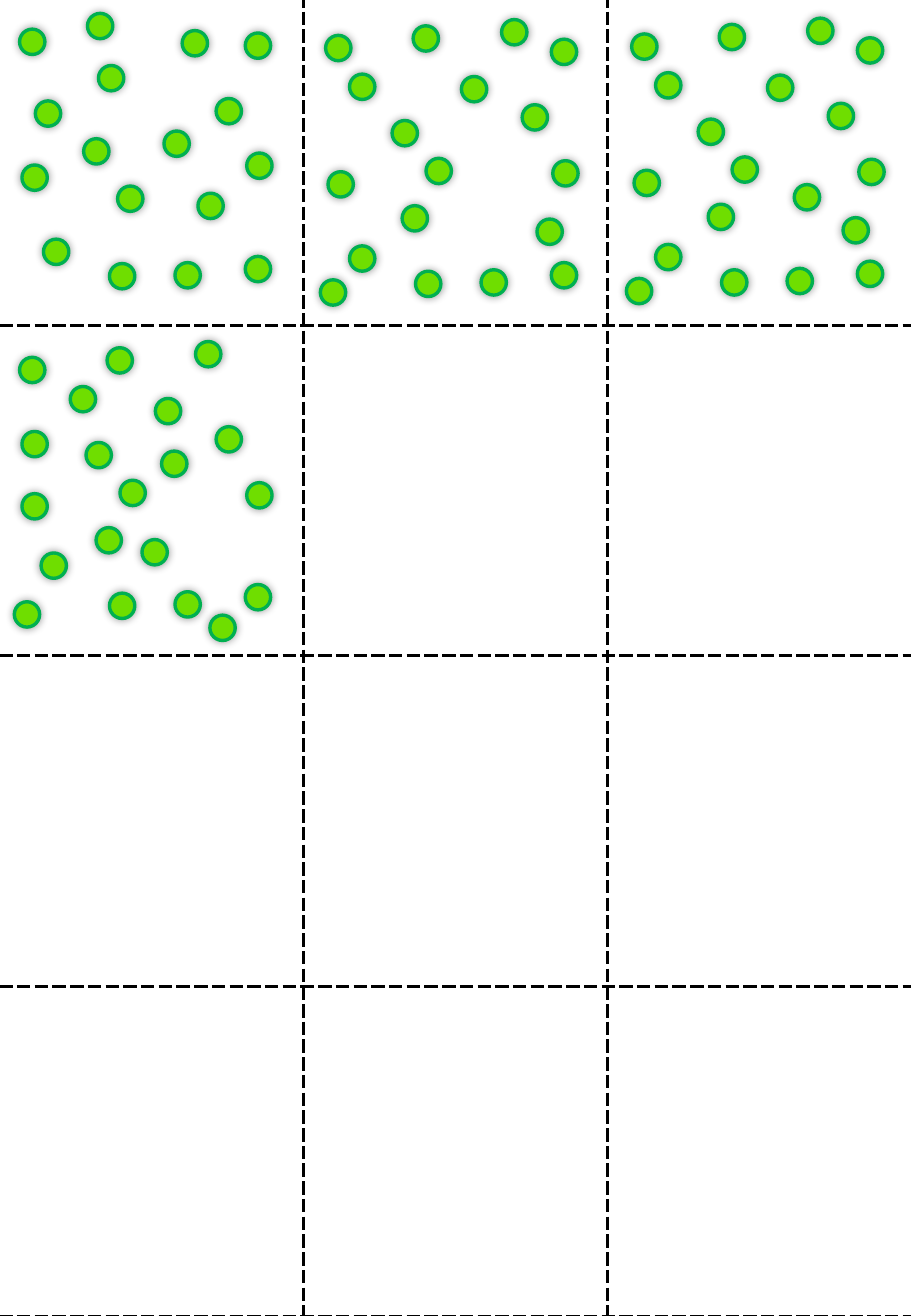
"""Draw a sheet of dashed cards, four of them filled with green dots."""
from dataclasses import dataclass

from lxml.etree import SubElement
from pptx import Presentation
from pptx.dml.color import RGBColor
from pptx.enum.shapes import MSO_SHAPE
from pptx.oxml import parse_xml
from pptx.oxml.ns import nsdecls, qn
from pptx.util import Cm, Pt

PAGE = (19.05, 27.51)
GRID = (3, 4)
CARD = (6.35, 6.91)
TOP = -0.11
DOT = 0.53

FIRST = [
    (0.46, 3.45), (2.46, 3.89), (1.75, 2.9), (0.41, 0.61), (5.13, 0.69),
    (3.81, 0.64), (5.13, 5.36), (2.29, 5.51), (4.52, 2.06), (4.14, 4.04),
    (3.43, 2.74), (0.91, 5.0), (5.16, 3.2), (1.83, 0.28), (2.06, 1.37),
    (3.66, 5.49), (0.74, 2.11),
]
BASE = [
    (0.46, 3.56), (2.01, 4.27), (2.51, 3.28), (0.41, 0.71), (4.09, 0.38),
    (5.13, 5.46), (2.29, 5.64), (4.52, 2.16), (1.8, 2.49), (5.16, 3.33),
    (2.24, 0.51), (3.25, 1.57), (3.66, 5.61), (0.3, 5.82),
]
SECOND = BASE + [(5.13, 0.79), (4.83, 4.55), (0.91, 5.11), (0.91, 1.52)]
THIRD = SECOND + [(3.81, 3.86)]
FOURTH = BASE + [
    (4.39, 6.1), (0.86, 4.8), (1.47, 1.32), (0.46, 2.26), (2.97, 4.52),
    (3.38, 2.67),
]
CARDS = [
    ((0, 0), FIRST),
    ((6.4, 0.03), SECOND),
    ((12.8, 0), THIRD),
    ((0, 6.76), FOURTH),
]


@dataclass(frozen=True)
class Theme:
    """Hold the colours and line widths."""
    dot: str = "6FDE00"
    rim: str = "00B050"
    cut: str = "000000"
    edge: str = "FFFFFF"
    shade: str = "000000"
    rim_width: float = 2
    cut_width: float = 2.25
    edge_width: float = 1


THEME = Theme()


def border(side, inner):
    """Return one cell border, dashed where cards meet."""
    tone = THEME.cut if inner else THEME.edge
    width = Pt(THEME.cut_width if inner else THEME.edge_width)
    dash = "sysDash" if inner else "solid"
    return parse_xml(
        f'<a:{side} {nsdecls("a")} w="{width}"><a:solidFill>'
        f'<a:srgbClr val="{tone}"/></a:solidFill>'
        f'<a:prstDash val="{dash}"/></a:{side}>'
    )


def add_grid(slide):
    """Add the table of cards."""
    cols, rows = GRID
    wide, high = CARD
    table = slide.shapes.add_table(
        rows, cols, Cm(0), Cm(TOP), Cm(cols * wide), Cm(rows * high)
    ).table
    table.first_row = table.horz_banding = False
    for row in range(rows):
        table.rows[row].height = Cm(high)
        for col in range(cols):
            cell = table.cell(row, col)
            cell.fill.background()
            sides = {
                "lnL": col > 0,
                "lnR": col < cols - 1,
                "lnT": row > 0,
                "lnB": True,
            }
            props = cell._tc.get_or_add_tcPr()
            for spot, (side, inner) in enumerate(sides.items()):
                props.insert(spot, border(side, inner))


def add_dot(slide, left, top):
    """Add one green dot with a soft shadow."""
    dot = slide.shapes.add_shape(
        MSO_SHAPE.OVAL, Cm(left), Cm(top), Cm(DOT), Cm(DOT)
    )
    dot.fill.solid()
    dot.fill.fore_color.rgb = RGBColor.from_string(THEME.dot)
    dot.line.color.rgb = RGBColor.from_string(THEME.rim)
    dot.line.width = Pt(THEME.rim_width)
    dot.shadow.inherit = False
    glow = SubElement(
        dot._element.spPr.find(qn("a:effectLst")), qn("a:outerShdw"),
        blurRad=str(Pt(5)), dist="0", algn="ctr", rotWithShape="0",
    )
    tone = SubElement(glow, qn("a:srgbClr"), val=THEME.shade)
    SubElement(tone, qn("a:alpha"), val="40000")


def main():
    """Build and save the sheet."""
    deck = Presentation()
    deck.slide_width, deck.slide_height = map(Cm, PAGE)
    slide = deck.slides.add_slide(deck.slide_layouts[6])
    add_grid(slide)
    for (left, top), dots in CARDS:
        for across, down in dots:
            add_dot(slide, left + across, top + down)
    deck.save("out.pptx")


if __name__ == "__main__":
    main()
